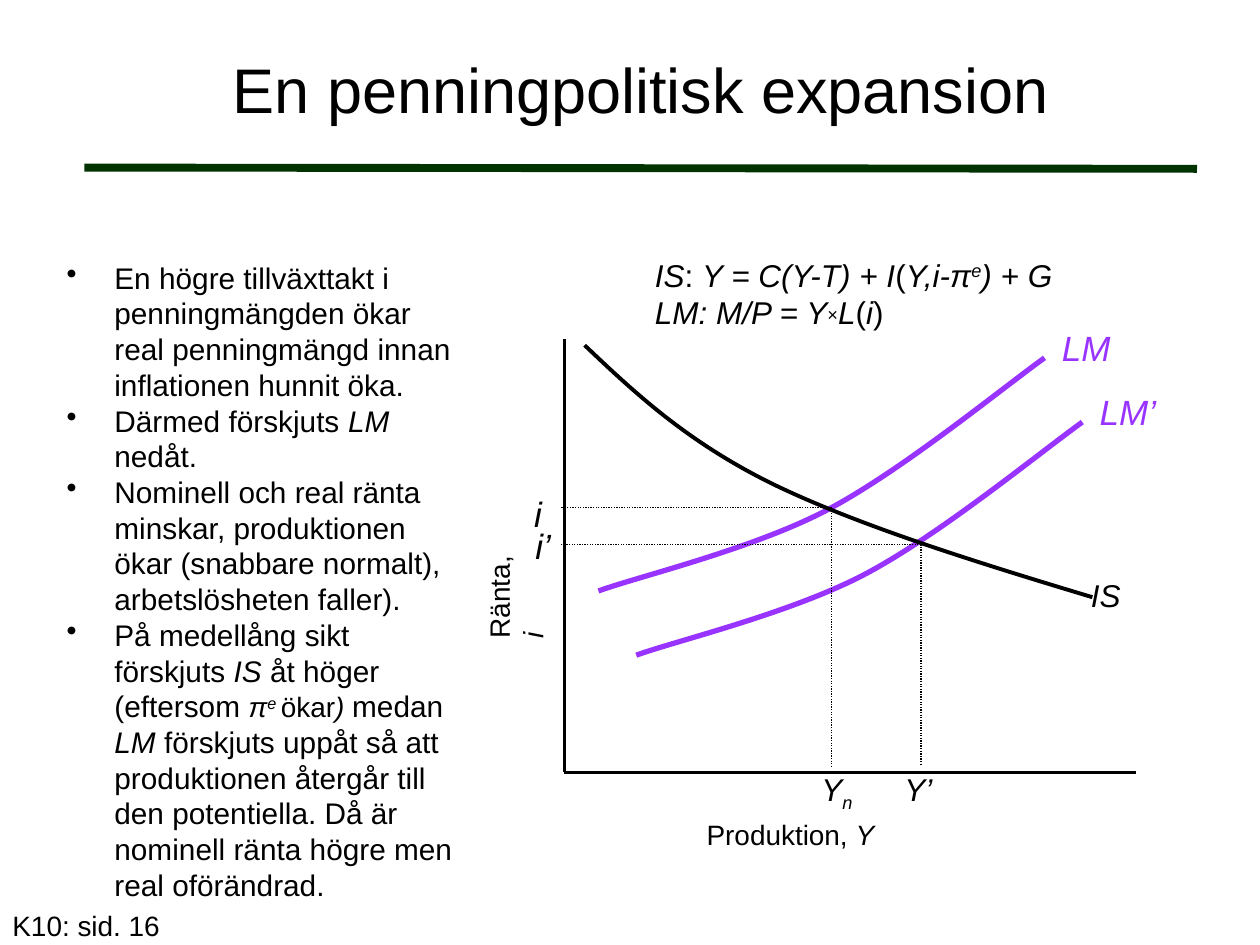
import pptx
import pptx.util
import pptx.dml.color
import pptx.enum.dml
import pptx.enum.shapes
import pptx.enum.text
import pptx.oxml
import lxml.etree

Inches, Pt = pptx.util.Inches, pptx.util.Pt
tint = pptx.dml.color.RGBColor.from_string
name = pptx.oxml.ns.qn
BLACK, GREEN, VIOLET = "000000", "003300", "9933FF"

deck = pptx.Presentation()
deck.slide_width, deck.slide_height = Inches(10), Inches(7.5)
slide = deck.slides.add_slide(deck.slide_layouts[5])
shapes = slide.shapes


def rule(x1, y1, x2, y2, colour, width, dash=None):
    kind = pptx.enum.shapes.MSO_CONNECTOR.STRAIGHT
    line = shapes.add_connector(kind, Inches(x1), Inches(y1), Inches(x2), Inches(y2))
    line.line.color.rgb = tint(colour)
    line.line.width = Pt(width)
    if dash:
        line.line.dash_style = dash
    lxml.etree.SubElement(line._element.spPr, name("a:effectLst"))


def write(place, paras, size, colour=BLACK, wrap=False):
    box = shapes.add_textbox(*[Inches(v) for v in place])
    frame = box.text_frame
    frame.word_wrap = wrap
    frame.auto_size = pptx.enum.text.MSO_AUTO_SIZE.SHAPE_TO_FIT_TEXT
    for n, parts in enumerate(paras):
        para = frame.paragraphs[0] if n == 0 else frame.add_paragraph()
        para.font.name, para.font.size = "Arial", Pt(size)
        para.font.color.rgb = tint(colour)
        for words, slant, *more in parts:
            run = para.add_run()
            run.text = words
            run.font.italic = slant
            if more and more[0]:
                run._r.get_or_add_rPr().set("baseline", str(more[0] * 1000))
            if len(more) > 1:
                run.font.size = Pt(more[1])
    return box


rule(0.67, 1.33, 9.5, 1.34, GREEN, 4.5)

title = shapes.title
title.left, title.top, title.width, title.height = [Inches(v) for v in (0.67, 0.08, 8.83, 1.24)]
title.text_frame.text = "En penningpolitisk expansion"
title.text_frame.vertical_anchor = pptx.enum.text.MSO_ANCHOR.MIDDLE
head = title.text_frame.paragraphs[0]
head.alignment = pptx.enum.text.PP_ALIGN.CENTER
head.font.name, head.font.size = "Arial", Pt(36)
head.font.color.rgb = tint(BLACK)

lm = [(4.75, 4.69), (5.05, 4.58), (5.97, 4.36), (6.56, 4.05), (7.15, 3.74), (7.93, 3.1), (8.29, 2.84)]
shift = [(x + 0.3, y + 0.51) for x, y in lm]
demand = [(4.64, 2.74), (5.05, 3.13), (5.46, 3.51), (6.13, 3.84), (6.81, 4.17), (7.74, 4.46), (8.67, 4.74)]
for knots, colour, width in ((shift, VIOLET, 3), (lm, VIOLET, 3), (demand, BLACK, 2.25)):
    start, *rest = [(Inches(x), Inches(y)) for x, y in knots]
    trace = shapes.build_freeform(*start)
    trace.add_line_segments(rest, close=False)
    curve = trace.convert_to_shape()
    legs = list(curve._element.iter(name("a:lnTo")))
    for k in (0, 3):
        bend = lxml.etree.Element(name("a:cubicBezTo"))
        legs[k].addprevious(bend)
        for leg in legs[k:k + 3]:
            bend.append(leg[0])
            leg.getparent().remove(leg)
    curve.shadow.inherit = False
    curve.fill.background()
    curve.line.color.rgb = tint(colour)
    curve.line.width = Pt(width)

rule(4.48, 2.69, 4.48, 6.13, BLACK, 1.5)
rule(4.48, 6.13, 9.02, 6.13, BLACK, 1.5)
dot = pptx.enum.dml.MSO_LINE.ROUND_DOT
for x, y in ((6.6, 4.03), (7.31, 4.32)):
    rule(x, y, 4.45, y, BLACK, 0.75, dot)
    rule(x, y, x, 6.08, BLACK, 0.75, dot)

for place, parts, size, colour in (
    ((8.63, 3.05, 0.73, 0.43), [("LM’", True)], 20, VIOLET),
    ((8.33, 2.54, 0.66, 0.43), [("LM", True)], 20, VIOLET),
    ((8.56, 4.52, 0.44, 0.4), [("IS", True)], 18, BLACK),
    ((4.14, 3.86, 0.26, 0.43), [("i", True)], 20, BLACK),
    ((6.42, 6.06, 0.46, 0.4), [("Y", True), ("n", True, -25)], 18, BLACK),
    ((5.51, 6.44, 1.54, 0.37), [("Produktion, ", False), ("Y", True)], 16, BLACK),
):
    write(place, [parts], size, colour)
write((4.15, 4.11, 0.71, 0.43), [[("i’", True)]], 20, wrap=True)
write((7.08, 6.06, 0.71, 0.4), [[("Y’", True)]], 18, wrap=True)
write((0, 7.16, 2.08, 0.37), [[("K10: sid. 16", False)]], 16, wrap=True)
side = write((3.48, 4.5, 0.96, 0.37), [[("Ränta, ", False), ("i", True)]], 16)
side.rotation = 270

write((5.1, 1.98, 3.4, 0.71), [
    [("IS", True), (": ", False), ("Y = C(Y-T) + I", True), ("(", False),
     ("Y,i-π", True), ("e", True, 30), (") + G", True)],
    [("LM: M/P = Y", True), ("×", False, 10), ("L", True), ("(", False), ("i", True), (")", False)],
], 18)

notes = write((0.43, 2.01, 3.34, 5.25), [
    [("En högre tillväxttakt i penningmängden ökar real penningmängd innan inflationen hunnit öka.", False)],
    [("Därmed förskjuts ", False), ("LM ", True), ("nedåt.", False)],
    [("Nominell och real ränta minskar, produktionen ökar (snabbare normalt), arbetslösheten faller).", False)],
    [("På medellång sikt förskjuts ", False), ("IS ", True), ("åt höger (eftersom ", False),
     ("π", True, 0, 16), ("e ", True, 30, 16), ("ökar", False, 0, 16), (") ", True, 0, 16),
     ("medan ", False), ("LM ", True),
     ("förskjuts uppåt så att produktionen återgår till den potentiella. "
      "Då är nominell ränta högre men real oförändrad.", False)],
], 17, wrap=True)
for para in notes.text_frame.paragraphs:
    props = para._p.get_or_add_pPr()
    props.set("marL", str(Inches(0.38)))
    props.set("indent", str(Inches(-0.38)))
    bullet = pptx.oxml.parse_xml(
        '<a:buChar xmlns:a="http://schemas.openxmlformats.org/drawingml/2006/main" char="•"/>')
    props.find(name("a:defRPr")).addprevious(bullet)

deck.save("out.pptx")
